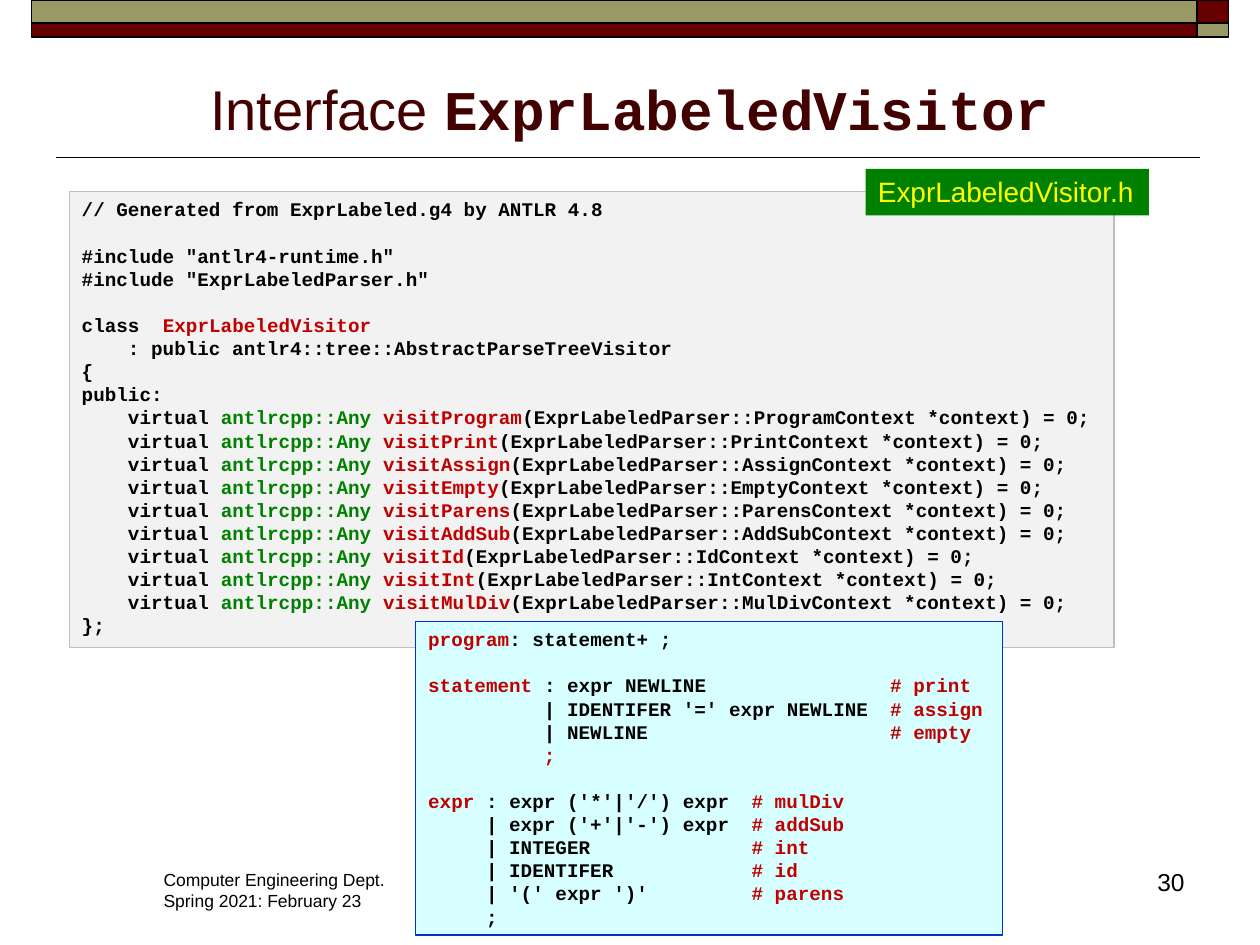
from lxml.etree import SubElement as Sub
from pptx import Presentation
from pptx.dml.color import RGBColor as Rgb
from pptx.enum.shapes import MSO_CONNECTOR as Link, MSO_SHAPE as Kind
from pptx.enum.text import MSO_ANCHOR as Anchor, PP_ALIGN as Align
from pptx.oxml.ns import qn
from pptx.util import Pt

BLACK, RED, GREEN = "000000", "C00000", "008000"
WINE, OLIVE, TITLE = "660000", "999966", "420000"
SANS, MONO = "Arial", "Courier New"
GAP = None

bars = [
    (18, 0, 666, 13, OLIVE), (684, 0, 18, 13, WINE),
    (18, 13, 666, 8, WINE), (684, 13, 18, 8, OLIVE),
]

rules = ["Program", "Print", "Assign", "Empty", "Parens",
         "AddSub", "Id", "Int", "MulDiv"]

code = [
    [("// Generated from ExprLabeled.g4 by ANTLR 4.8", BLACK)],
    GAP,
    [('#include "antlr4-runtime.h"', BLACK)],
    [('#include "ExprLabeledParser.h"', BLACK)],
    GAP,
    [("class  ", BLACK), ("ExprLabeledVisitor", RED)],
    [("    : public antlr4::tree::AbstractParseTreeVisitor", BLACK)],
    [("{", BLACK)],
    [("public:", BLACK)],
    *[[("    virtual ", BLACK), ("antlrcpp::Any ", GREEN), (f"visit{rule}", RED),
       (f"(ExprLabeledParser::{rule}Context *context) = 0;", BLACK)]
      for rule in rules],
    [("};", BLACK)],
]

grammar = [
    [("program", RED), (": statement+ ;", BLACK)],
    GAP,
    [("statement", RED), (" : expr NEWLINE\t", BLACK), ("# print", RED)],
    [("          | IDENTIFER '=' expr NEWLINE\t", BLACK), ("# assign", RED)],
    [("          | NEWLINE\t", BLACK), ("# empty", RED)],
    [("          ;", RED)],
    GAP,
    [("expr", RED), (" : expr ('*'|'/') expr\t", BLACK), ("# mulDiv", RED)],
    [("     | expr ('+'|'-') expr\t", BLACK), ("# addSub", RED)],
    [("     | INTEGER\t", BLACK), ("# int", RED)],
    [("     | IDENTIFER\t", BLACK), ("# id", RED)],
    [("     | '(' expr ')'\t", BLACK), ("# parens", RED)],
    [("     ;", BLACK)],
]
SIZE, PITCH, CHAR = 11, 13.2, 6.6
STOPS = {2: 40, 3: 40, 4: 40, 7: 28, 8: 28, 9: 28, 10: 28, 11: 28}

deck = Presentation()
deck.slide_width, deck.slide_height = Pt(720), Pt(540)
slide = deck.slides.add_slide(deck.slide_layouts[6])


def paint(part, tone):
    part.color.rgb = Rgb.from_string(tone)


def rect(x, y, w, h, fill, edge=None, width=1):
    shape = slide.shapes.add_shape(Kind.RECTANGLE, Pt(x), Pt(y), Pt(w), Pt(h))
    shape.shadow.inherit = False
    shape.fill.solid()
    shape.fill.fore_color.rgb = Rgb.from_string(fill)
    if edge:
        paint(shape.line, edge)
        shape.line.width = Pt(width)
    else:
        shape.line.fill.background()
    return shape


def label(x, y, w, h):
    return slide.shapes.add_textbox(Pt(x), Pt(y), Pt(w), Pt(h))


def write(shape, lines, size, font=SANS, bold=False, pitch=None,
          align=Align.LEFT, anchor=Anchor.TOP, stops=None):
    frame = shape.text_frame
    frame.word_wrap = True
    frame.vertical_anchor = anchor
    fresh, gap = True, False
    for row, line in enumerate(lines):
        if line is GAP:
            gap = True
            continue
        para = frame.paragraphs[0] if fresh else frame.add_paragraph()
        para.alignment = align
        if pitch:
            para.line_spacing = Pt(pitch)
        if gap:
            para.space_before = Pt(pitch)
        if stops and row in stops:
            tabs = Sub(para._p.get_or_add_pPr(), qn("a:tabLst"))
            Sub(tabs, qn("a:tab"), pos=str(Pt(stops[row] * CHAR)), algn="l")
        for text, tone, *face in line:
            run = para.add_run()
            run.text = text
            run.font.size = Pt(size)
            run.font.name = face[0] if face else font
            run.font.bold = bold or bool(face)
            paint(run.font, tone)
        fresh, gap = False, False


rule = slide.shapes.add_connector(Link.STRAIGHT, Pt(686), Pt(90), Pt(32), Pt(90))
paint(rule.line, BLACK)
rule.line.width = Pt(1)
Sub(rule._element.spPr, qn("a:effectLst"))

for x, y, w, h, fill in bars:
    rect(x, y, w, h, fill, BLACK)

write(label(86.4, 493.2, 142, 32),
      [[("Computer Engineering Dept.", BLACK)], [("Spring 2021: February 23", BLACK)]],
      10, pitch=12)
write(label(36, 32.4, 648, 52),
      [[("Interface ", TITLE), ("ExprLabeledVisitor", TITLE, MONO)]],
      32, align=Align.CENTER, anchor=Anchor.BOTTOM)
write(label(633.6, 491.8, 50.4, 36), [[("30", BLACK)]], 14, align=Align.RIGHT)

write(rect(39.6, 109.4, 597, 260.6, "F2F2F2", "BFBFBF", 0.75),
      code, SIZE, MONO, True, PITCH)
write(rect(494.6, 96.5, 162, 26.6, GREEN), [[("ExprLabeledVisitor.h", "FFFF00")]], 16)
write(rect(237.6, 355, 335.5, 179.3, "D7FFFF", "0033CC", 0.75),
      grammar, SIZE, MONO, True, PITCH, stops=STOPS)

deck.save("out.pptx")
